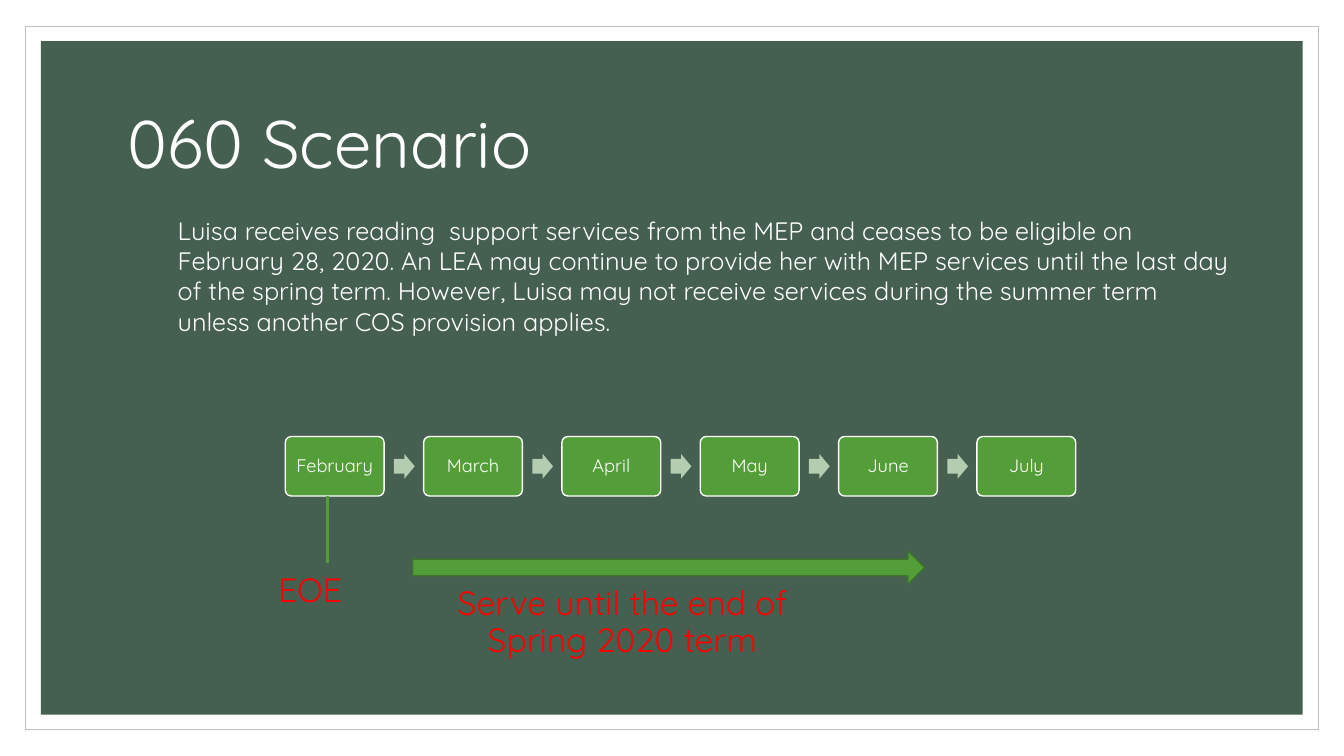
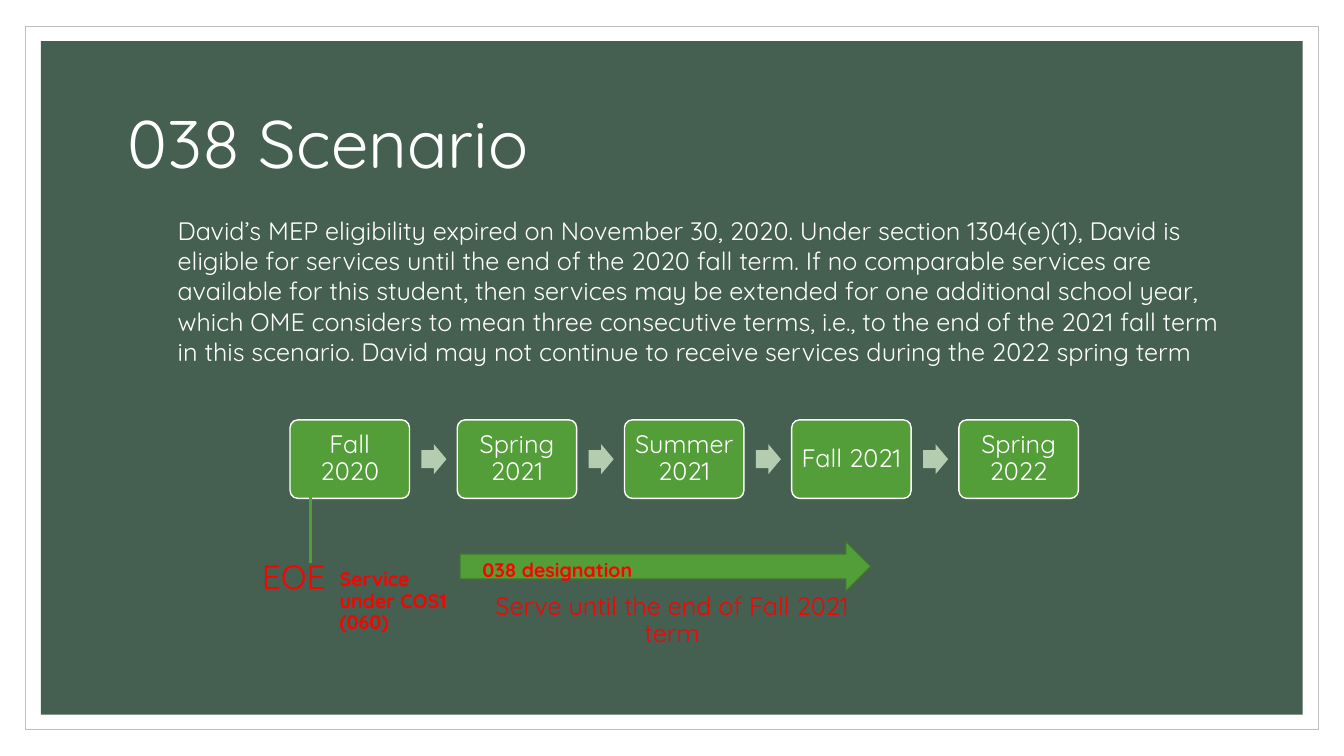
import pptx
import pptx.dml.color
import pptx.enum.shapes
import pptx.enum.text
import pptx.oxml
import pptx.util

Cm = pptx.util.Cm
SHAPES = pptx.enum.shapes.MSO_SHAPE
ALIGN = pptx.enum.text.PP_ALIGN
ANCHOR = pptx.enum.text.MSO_ANCHOR

FONT = "Quicksand"
WHITE = "FFFFFF"
PANEL = "455F51"
FRAME_LINE = "BFBFBF"
GREEN = "549E39"
DARK_GREEN = "3E752A"
PALE_GREEN = "B4CCAF"
RED = "FF0000"

FRAME_BOX = (0.65, 0.66, 32.57, 17.73)
PANEL_BOX = (1.03, 1.04, 31.8, 16.97)
TITLE_BOX = (2.97, 1.8, 27.94, 3.81)
BODY_BOX = (4.23, 5.3, 27.1, 5.72)
MARKER_TOP, MARKER_BOTTOM = 12.5, 14.18

SCENARIOS = [
    {
        "title": "060 Scenario",
        "body": "Luisa receives reading  support services from the MEP and ceases to be "
                "eligible on February 28, 2020. An LEA may continue to provide her with MEP "
                "services until the last day of the spring term. However, Luisa may not "
                "receive services during the summer term unless another COS provision applies.",
        "terms": ["February", "March", "April", "May", "June", "July"],
        "first_term": (7.19, 11, 2.49, 1.5),
        "term_size": 13,
        "service_arrow": (10.4, 13.88, 12.9, 0.84),
        "marker_left": 8.26,
        "labels": [
            ("EOE", (6.76, 14.33, 2.57, 1.17), {"size": 24}),
            ("Serve until the end of Spring 2020 term", (10.82, 14.66, 9.73, 2.11),
             {"size": 24, "align": ALIGN.CENTER}),
        ],
    },
    {
        "title": "038 Scenario",
        "body": "David’s MEP eligibility expired on November 30, 2020. Under section "
                "1304(e)(1), David is eligible for services until the end of the 2020 fall "
                "term. If no comparable services are available for this student, then "
                "services may be extended for one additional school year, which OME considers "
                "to mean three consecutive terms, i.e., to the end of the 2021 fall term in "
                "this scenario. David may not continue to receive services during the 2022 "
                "spring term",
        "terms": ["Fall 2020", "Spring 2021", "Summer 2021", "Fall 2021", "Spring 2022"],
        "first_term": (7.31, 10.58, 3.01, 1.98),
        "term_size": 18,
        "service_arrow": (11.59, 13.64, 10.36, 1.27),
        "marker_left": 7.82,
        "labels": [
            ("EOE", (6.35, 14, 2.44, 1.17), {"size": 24}),
            ("Serve until the end of Fall 2021 term", (12.07, 14.83, 9.73, 1.65),
             {"size": 18, "align": ALIGN.CENTER}),
            ("Service under COS1 (060)", (8.31, 14.24, 3.28, 1.88),
             {"size": 14, "bold": True}),
            ("038 designation", (11.91, 14, 5.92, 0.79), {"size": 14, "bold": True}),
        ],
    },
]


def color(value):
    return pptx.dml.color.RGBColor.from_string(value)


def write(shape, text, size=18, ink=WHITE, bold=False, align=ALIGN.LEFT,
          anchor=ANCHOR.TOP, spacing=0.9, inset=None):
    frame = shape.text_frame
    frame.word_wrap = True
    frame.vertical_anchor = anchor
    if inset is not None:
        frame.margin_left = frame.margin_right = Cm(inset)
        frame.margin_top = frame.margin_bottom = Cm(inset)
    paragraph = frame.paragraphs[0]
    paragraph.alignment = align
    paragraph.line_spacing = spacing
    run = paragraph.add_run()
    run.text = text
    run.font.name = FONT
    run.font.size = pptx.util.Pt(size)
    run.font.bold = bold
    run.font.color.rgb = color(ink)


def add_text(slide, text, box, **text_format):
    write(slide.shapes.add_textbox(*map(Cm, box)), text, **text_format)


def add_block(slide, kind, box, fill, line=None, width=1, adjustments=()):
    shape = slide.shapes.add_shape(kind, *map(Cm, box))
    shape.shadow.inherit = False
    shape.fill.solid()
    shape.fill.fore_color.rgb = color(fill)
    if line:
        shape.line.color.rgb = color(line)
        shape.line.width = pptx.util.Pt(width)
    else:
        shape.line.fill.background()
    for index, value in enumerate(adjustments):
        shape.adjustments[index] = value
    return shape


def add_marker(slide, left):
    marker = slide.shapes.add_connector(
        pptx.enum.shapes.MSO_CONNECTOR.STRAIGHT,
        Cm(left), Cm(MARKER_TOP), Cm(left), Cm(MARKER_BOTTOM))
    marker.line.color.rgb = color(GREEN)
    marker.line.width = pptx.util.Pt(2)
    marker._element.spPr.append(pptx.oxml.parse_xml(
        '<a:effectLst xmlns:a="http://schemas.openxmlformats.org/drawingml/2006/main"/>'))


def add_timeline(slide, terms, first_term, size):
    first_left, top, width, height = first_term
    arrow_width, arrow_height = 0.21 * width, 0.25 * width
    arrow_top = top + (height - arrow_height) / 2
    for index, term in enumerate(terms):
        left = first_left + index * 1.4 * width
        box = add_block(slide, SHAPES.ROUNDED_RECTANGLE, (left, top, width, height),
                        GREEN, WHITE, adjustments=(0.1,))
        write(box, term, size=size, align=ALIGN.CENTER, anchor=ANCHOR.MIDDLE, inset=0.16)
        if index < len(terms) - 1:
            add_block(slide, SHAPES.RIGHT_ARROW,
                      (left + 1.1 * width, arrow_top, arrow_width, arrow_height),
                      PALE_GREEN, adjustments=(0.6, 0.5))


def add_scenario(presentation, scenario):
    slide = presentation.slides.add_slide(presentation.slide_layouts[6])
    add_block(slide, SHAPES.RECTANGLE, FRAME_BOX, WHITE, FRAME_LINE, 0.5)
    add_block(slide, SHAPES.RECTANGLE, PANEL_BOX, PANEL)
    add_text(slide, scenario["title"], TITLE_BOX, size=48, anchor=ANCHOR.MIDDLE)
    add_text(slide, scenario["body"], BODY_BOX, spacing=1.0)
    add_timeline(slide, scenario["terms"], scenario["first_term"], scenario["term_size"])
    add_block(slide, SHAPES.RIGHT_ARROW, scenario["service_arrow"], GREEN, DARK_GREEN)
    add_marker(slide, scenario["marker_left"])
    for text, box, text_format in scenario["labels"]:
        add_text(slide, text, box, ink=RED, **text_format)


def main():
    presentation = pptx.Presentation()
    presentation.slide_width = Cm(33.87)
    presentation.slide_height = Cm(19.05)
    for scenario in SCENARIOS:
        add_scenario(presentation, scenario)
    presentation.save("out.pptx")


if __name__ == "__main__":
    main()
